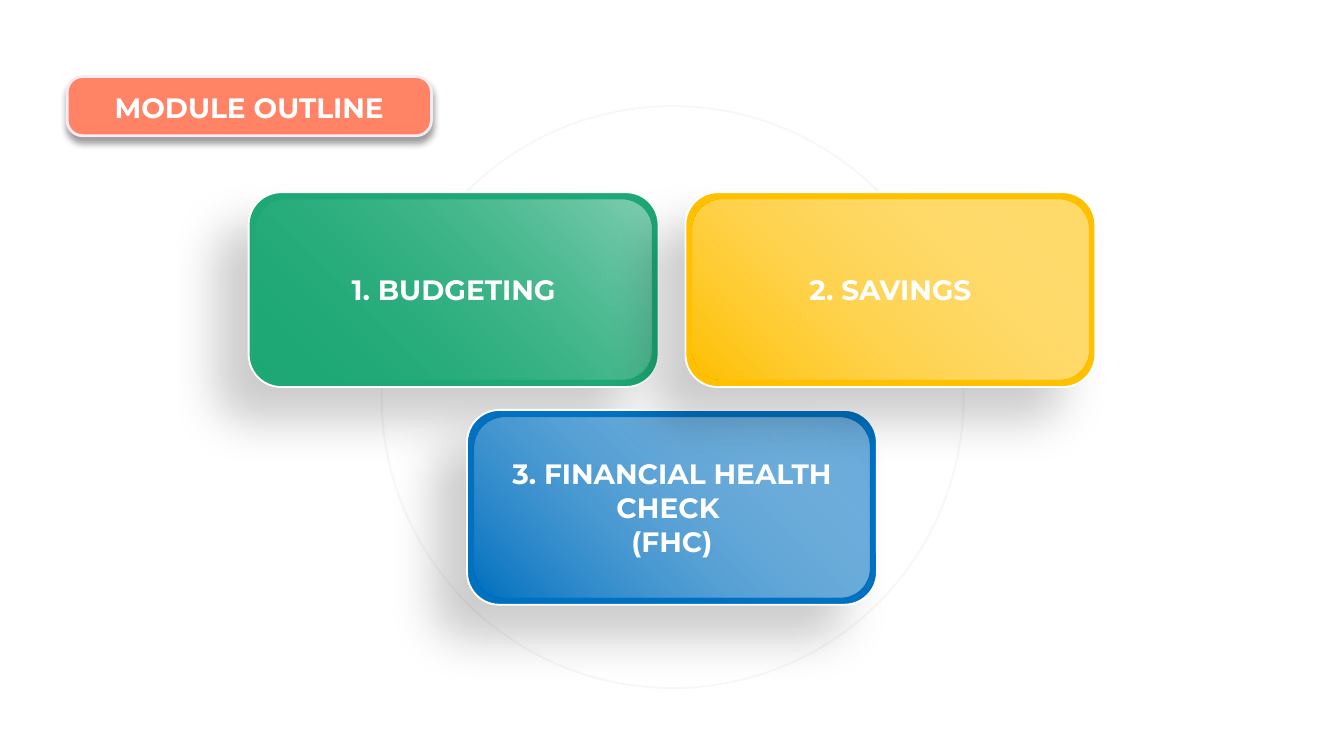
from dataclasses import dataclass

from lxml.etree import SubElement
from pptx import Presentation
from pptx.dml.color import RGBColor as RGB
from pptx.enum.shapes import MSO_SHAPE as SHAPE
from pptx.enum.text import MSO_AUTO_SIZE as AUTO_SIZE, PP_ALIGN as ALIGN
from pptx.oxml.ns import qn
from pptx.util import Inches, Pt


@dataclass(frozen=True)
class Theme:
    font: str = "Montserrat"
    text_size: float = 15
    white: str = "FFFFFF"
    black: str = "000000"
    ring: str = "D8D8D8"
    green: str = "1DA875"
    blue: str = "0070C0"
    yellow: str = "FFC000"
    coral: str = "FF8364"
    title_edge: str = "F9EBF5"


THEME = Theme()
CARD_W, CARD_H = 3.05, 1.45
SHEEN_W, SHEEN_H = 2.94, 1.34
TOP_ROW, BOTTOM_ROW = 1.43, 3.05
LEFT_CARD, RIGHT_CARD = 1.85, 5.1
MIDDLE_CARD = (LEFT_CARD + RIGHT_CARD) / 2
LINE_H, TEXT_PAD = 0.25, 0.08


def add_color(parent, color, alpha):
    """Append a colour with its opacity in percent to an XML element."""
    node = SubElement(parent, qn("a:srgbClr"), val=color)
    SubElement(node, qn("a:alpha"), val=str(alpha * 1000))


def add_shape(parent, kind, left, top, width, height, rounding=None):
    shape = parent.shapes.add_shape(
        kind, Inches(left), Inches(top), Inches(width), Inches(height))
    shape.shadow.inherit = False
    shape.fill.background()
    shape.line.fill.background()
    if rounding is not None:
        shape.adjustments[0] = rounding
    return shape


def set_fill(shape, color):
    shape.fill.solid()
    shape.fill.fore_color.rgb = RGB.from_string(color)


def set_line(shape, color, width):
    shape.line.color.rgb = RGB.from_string(color)
    shape.line.width = Pt(width)


def set_shadow(shape, alpha, blur, distance, angle):
    effects = shape._element.spPr.find(qn("a:effectLst"))
    shadow = SubElement(
        effects, qn("a:outerShdw"), blurRad=str(Pt(blur)), dist=str(Pt(distance)),
        dir=str(angle * 60000), algn="ctr", rotWithShape="0")
    add_color(shadow, THEME.black, alpha)


def set_sheen(shape, color, start_alpha):
    """Fade from the card colour at bottom left to translucent white at top right."""
    shape.fill.gradient()
    gradient = shape._element.spPr.find(qn("a:gradFill"))
    for child in list(gradient):
        gradient.remove(child)
    stops = SubElement(gradient, qn("a:gsLst"))
    for place, stop_color, alpha in (
            (0, color, start_alpha), (97, THEME.white, 41), (100, THEME.white, 41)):
        stop = SubElement(stops, qn("a:gs"), pos=str(place * 1000))
        add_color(stop, stop_color, alpha)
    SubElement(gradient, qn("a:lin"), ang=str(315 * 60000), scaled="0")


def add_label(parent, paragraphs, left, middle, width, line_count):
    """Add centred bold text around a vertical middle."""
    height = line_count * LINE_H + TEXT_PAD
    box = parent.shapes.add_textbox(
        Inches(left), Inches(middle - height / 2), Inches(width), Inches(height))
    frame = box.text_frame
    frame.word_wrap = True
    frame.auto_size = AUTO_SIZE.SHAPE_TO_FIT_TEXT
    frame.margin_left = frame.margin_right = Inches(0.07)
    frame.margin_top = frame.margin_bottom = Inches(0.04)
    for index, text in enumerate(paragraphs):
        para = frame.add_paragraph() if index else frame.paragraphs[0]
        para.alignment = ALIGN.CENTER
        span = para.add_run()
        span.text = text
        span.font.name = THEME.font
        span.font.size = Pt(THEME.text_size)
        span.font.bold = True
        span.font.color.rgb = RGB.from_string(THEME.white)


def add_ring(page):
    ring = add_shape(page, SHAPE.OVAL, 2.84, 0.79, 4.33, 4.33)
    set_line(ring, THEME.ring, 1)
    color = ring._element.spPr.find(".//" + qn("a:srgbClr"))
    SubElement(color, qn("a:alpha"), val="20000")


def add_card(page, paragraphs, left, top, color, line_count=1, start_alpha=100):
    group = page.shapes.add_group_shape()
    base = add_shape(group, SHAPE.ROUNDED_RECTANGLE, left, top, CARD_W, CARD_H, 0.167)
    set_fill(base, color)
    set_line(base, THEME.white, 1)
    set_shadow(base, alpha=20, blur=25, distance=25, angle=135)
    sheen = add_shape(
        group, SHAPE.ROUNDED_RECTANGLE, left + (CARD_W - SHEEN_W) / 2,
        top + (CARD_H - SHEEN_H) / 2, SHEEN_W, SHEEN_H, 0.167)
    set_sheen(sheen, color, start_alpha)
    add_label(group, paragraphs, left, top + CARD_H / 2, CARD_W, line_count)


def add_title(page, text):
    left, top, width, height = 0.5, 0.57, 2.71, 0.44
    group = page.shapes.add_group_shape()
    plate = add_shape(group, SHAPE.ROUNDED_RECTANGLE, left, top, width, height, 0.259)
    set_fill(plate, THEME.coral)
    set_line(plate, THEME.title_edge, 1.5)
    set_shadow(plate, alpha=40, blur=4, distance=3, angle=90)
    add_label(group, [text], left, top + height / 2 + 0.01, width, 1)


def main():
    deck = Presentation()
    deck.slide_width, deck.slide_height = Inches(10), Inches(10 * 9 / 16)
    page = deck.slides.add_slide(deck.slide_layouts[6])
    add_ring(page)
    add_card(page, ["1. BUDGETING"], LEFT_CARD, TOP_ROW, THEME.green, start_alpha=0)
    add_card(page, ["3. FINANCIAL HEALTH CHECK ", "(FHC)"],
             MIDDLE_CARD, BOTTOM_ROW, THEME.blue, line_count=3)
    add_card(page, ["2. SAVINGS"], RIGHT_CARD, TOP_ROW, THEME.yellow)
    add_title(page, "MODULE OUTLINE")
    deck.save("out.pptx")


if __name__ == "__main__":
    main()
